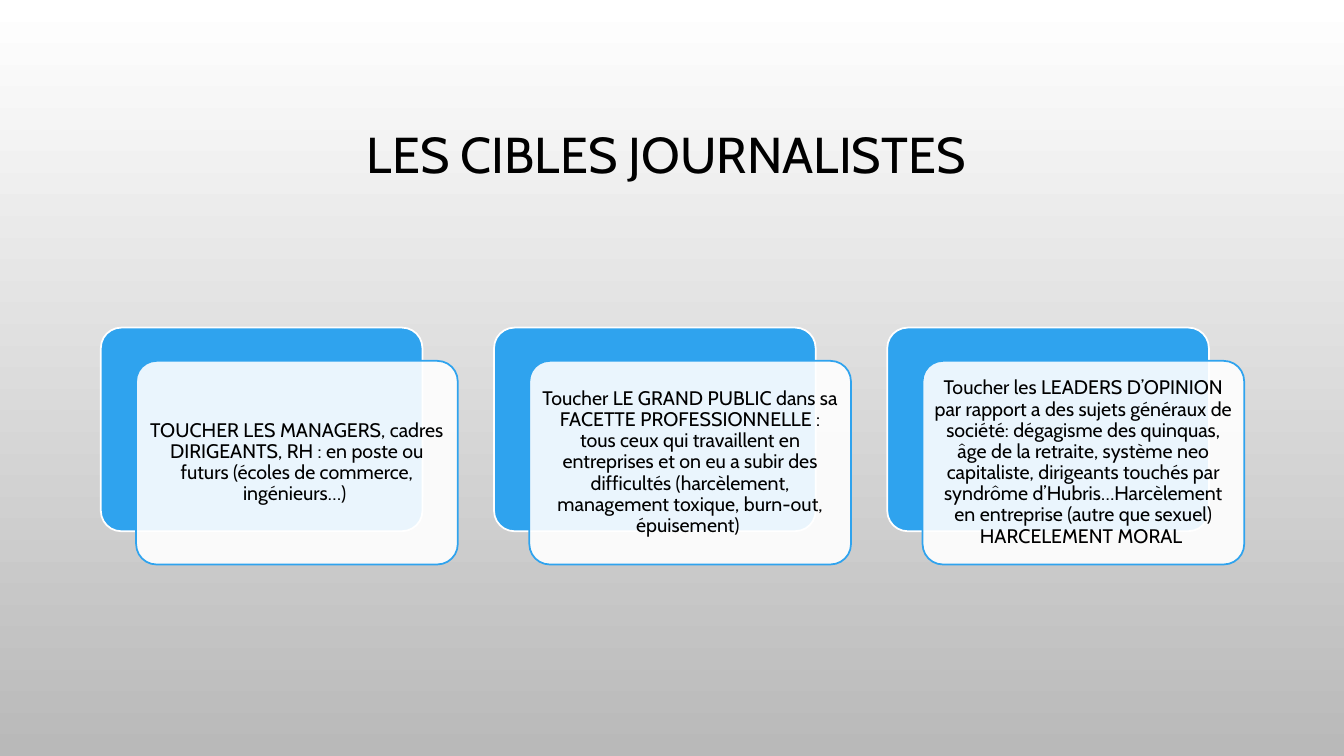
from lxml.etree import SubElement
from pptx import Presentation
from pptx.dml.color import RGBColor
from pptx.enum.shapes import MSO_SHAPE as Shape
from pptx.enum.text import MSO_ANCHOR as Anchor, PP_ALIGN as Align
from pptx.oxml.ns import qn
from pptx.util import Inches, Pt

BLUE, WHITE, BLACK = "2FA3EE", "FFFFFF", "000000"
MARGIN, COLUMN_STEP = 1, 3.9
CARD_TOP, CARD_WIDTH, CARD_HEIGHT = 3.25, 3.19, 2.02
OFFSET_X, OFFSET_Y = 0.35, 0.33

TARGETS = [
    "TOUCHER LES MANAGERS, cadres DIRIGEANTS, RH : en poste ou futurs "
    "(écoles de commerce, ingénieurs…) ",
    "Toucher LE GRAND PUBLIC dans sa FACETTE PROFESSIONNELLE : tous ceux qui "
    "travaillent en entreprises et on eu a subir des difficultés "
    "(harcèlement, management toxique, burn-out, épuisement) ",
    "Toucher les LEADERS D’OPINION par rapport a des sujets généraux de "
    "société: dégagisme des quinquas, âge de la retraite, système neo "
    "capitaliste, dirigeants touchés par syndrôme d’Hubris…Harcèlement en "
    "entreprise (autre que sexuel) HARCELEMENT MORAL ",
]


def color(hex_code):
    return RGBColor.from_string(hex_code)


def write(shape, text, size):
    """Fill a shape with one centred paragraph."""
    frame = shape.text_frame
    frame.text = text
    frame.word_wrap = True
    frame.vertical_anchor = Anchor.MIDDLE
    paragraph = frame.paragraphs[0]
    paragraph.alignment = Align.CENTER
    paragraph.line_spacing = 0.9
    font = paragraph.runs[0].font
    font.name, font.size = "Cabin", Pt(size)
    font.color.rgb = color(BLACK)


deck = Presentation()
deck.slide_width, deck.slide_height = Inches(13.33), Inches(7.5)
slide = deck.slides.add_slide(deck.slide_layouts[6])

backdrop = slide.background.fill
backdrop.gradient()
backdrop.gradient_angle = 270
for stop, shade in zip(backdrop.gradient_stops, (WHITE, "B9B9B9")):
    stop.color.rgb = color(shade)

title = slide.shapes.add_textbox(
    Inches(MARGIN), Inches(0.68), deck.slide_width - 2 * Inches(MARGIN), Inches(1.75))
write(title, "LES CIBLES JOURNALISTES ", 36)

for column, target in enumerate(TARGETS):
    left = MARGIN + column * COLUMN_STEP
    layers = [(0, 0, BLUE, WHITE), (OFFSET_X, OFFSET_Y, WHITE, BLUE)]
    for shift_x, shift_y, fill, outline in layers:
        card = slide.shapes.add_shape(
            Shape.ROUNDED_RECTANGLE, Inches(left + shift_x), Inches(CARD_TOP + shift_y),
            Inches(CARD_WIDTH), Inches(CARD_HEIGHT))
        card.adjustments[0] = 0.1
        card.shadow.inherit = False
        card.fill.solid()
        card.fill.fore_color.rgb = color(fill)
        card.line.color.rgb = color(outline)
        card.line.width = Pt(1.25)

    # The front card, last of the two layers, is 90 % opaque and holds the text
    front_fill = card.fill._xPr.find(qn("a:solidFill"))
    SubElement(front_fill[0], qn("a:alpha"), val="90000")
    frame = card.text_frame
    frame.margin_left = frame.margin_right = Inches(0.06)
    frame.margin_top = frame.margin_bottom = Inches(0.06)
    write(card, target, 14)

deck.save("out.pptx")
